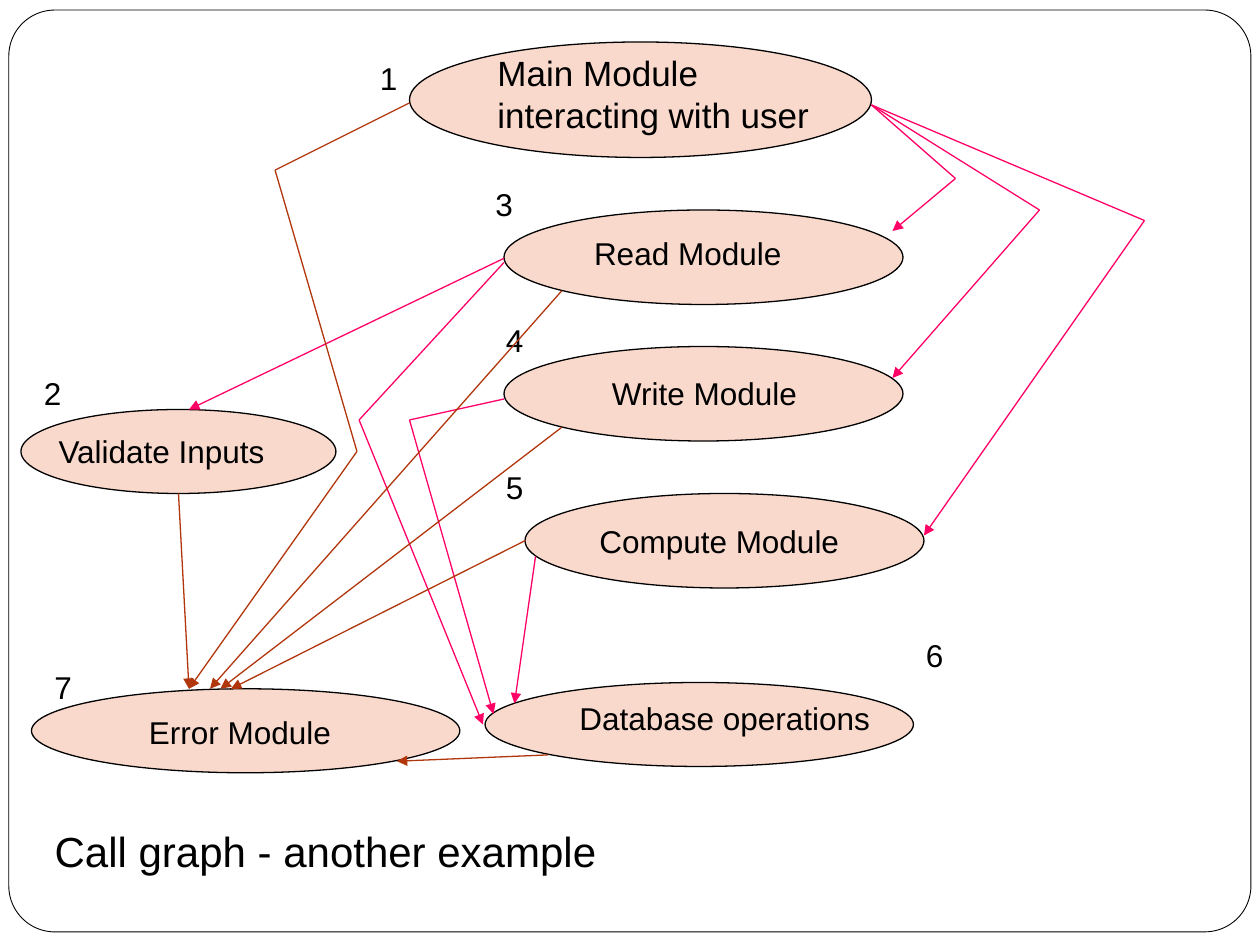
from itertools import pairwise
from lxml.etree import SubElement
from pptx import Presentation
from pptx.dml.color import RGBColor as RGB
from pptx.enum.shapes import MSO_CONNECTOR as LINK, MSO_SHAPE as SHAPE
from pptx.enum.text import MSO_ANCHOR as ANCHOR, PP_ALIGN as ALIGN
from pptx.oxml.ns import qn
from pptx.util import Inches, Pt

COLS, ROWS = 120, 90
HUES = {"paper": "FFFFFF", "ink": "000000", "node": "FAD9CD",
        "call": "FF0066", "error": "B1360B"}
TITLE = "Call graph - another example"
FRAME = (0.84, 0.96, 118.3, 87.8)

# name, size, oval box, label (left, top, width), number, number (left, top)
NODES = [
    ("Main Module interacting with user", 20, (39, 4, 44, 11), (46.2, 4.3, 35), "1", (35, 5)),
    ("Validate Inputs", 18, (2, 39, 30, 8), (4.4, 40.6, 24), "2", (3, 35)),
    ("Read Module", 18, (48, 20, 38, 9), (55.4, 21.7, 25), "3", (46, 17)),
    ("Write Module", 18, (48, 33, 38, 9), (57.1, 35, 27), "4", (47, 30)),
    ("Compute Module", 18, (50, 47, 38, 9), (55.9, 49.1, 29), "5", (47, 44)),
    ("Database operations", 18, (46.2, 65, 40.8, 8), (54, 66, 35), "6", (87, 60)),
    ("Error Module", 18, (3, 65.6, 40.8, 8), (13, 67.3, 22), "7", (4, 63)),
]

START, SINK = (83, 10), 65.6
ROUTES = {
    "call": [
        [(48, 24.6), (18, 39)],
        [START, (91, 17), (85, 22)],
        [START, (99, 20), (85, 36)],
        [START, (109, 21), (88, 51)],
        [(48, 25), (34.2, 40), (46, 69)],
        [(48, 38), (39, 40), (47, 68)],
        [(51, 53), (49, 67)],
    ],
    "error": [
        [(17, 47), (18, SINK)],
        [(39, 9.8), (26.2, 16.2), (34, 43), (18, SINK)],
        [(53.5, 27.7), (20, SINK)],
        [(53.5, 40.7), (21, SINK)],
        [(50, 51.5), (22, SINK)],
        [(52.2, 71.9), (37.8, 72.5)],
    ],
}

deck = Presentation()
deck.slide_width, deck.slide_height = Inches(10), Inches(7.5)
slide = deck.slides.add_slide(deck.slide_layouts[5])
shapes = slide.shapes


def place(*cells):
    units = (deck.slide_width / COLS, deck.slide_height / ROWS) * 2
    return [round(cell * unit) for cell, unit in zip(cells, units)]


def color(name):
    return RGB.from_string(HUES[name])


def outline(kind, box, fill, width):
    shape = shapes.add_shape(kind, *place(*box))
    shape.shadow.inherit = False
    shape.fill.solid()
    shape.fill.fore_color.rgb = color(fill)
    shape.line.color.rgb = color("ink")
    shape.line.width = Pt(width)
    return shape


def write(shape, text, size):
    frame = shape.text_frame
    frame.word_wrap = True
    frame.vertical_anchor = ANCHOR.TOP
    frame.text = text
    para = frame.paragraphs[0]
    para.alignment = ALIGN.LEFT
    para.font.name, para.font.size = "Arial", Pt(size)
    para.font.color.rgb = color("ink")


def label(text, size, left, top, width, height=4.8):
    write(shapes.add_textbox(*place(left, top, width, height)), text, size)


def draw(points, hue):
    for start, end in pairwise(points):
        line = shapes.add_connector(LINK.STRAIGHT, *place(*start, *end))
        line.line.color.rgb = color(hue)
        line.line.width = Pt(0.75)
        props = line._element.spPr
        SubElement(props, qn("a:effectLst"))
    SubElement(props.find(qn("a:ln")), qn("a:tailEnd"), type="triangle")


frame = outline(SHAPE.ROUNDED_RECTANGLE, FRAME, "paper", 0.5)
frame.adjustments[0] = 0.05

title = shapes.title
shapes._spTree.append(title._element)
title.left, title.top, title.width, title.height = place(4, 78, 84, 6)
write(title, TITLE, 24)

for name, size, oval, spot, number, corner in NODES:
    outline(SHAPE.OVAL, oval, "node", 0.75)
    label(name, size, *spot)
    label(number, 18, *corner, 6)

for hue, routes in ROUTES.items():
    for points in routes:
        draw(points, hue)

deck.save("out.pptx")
